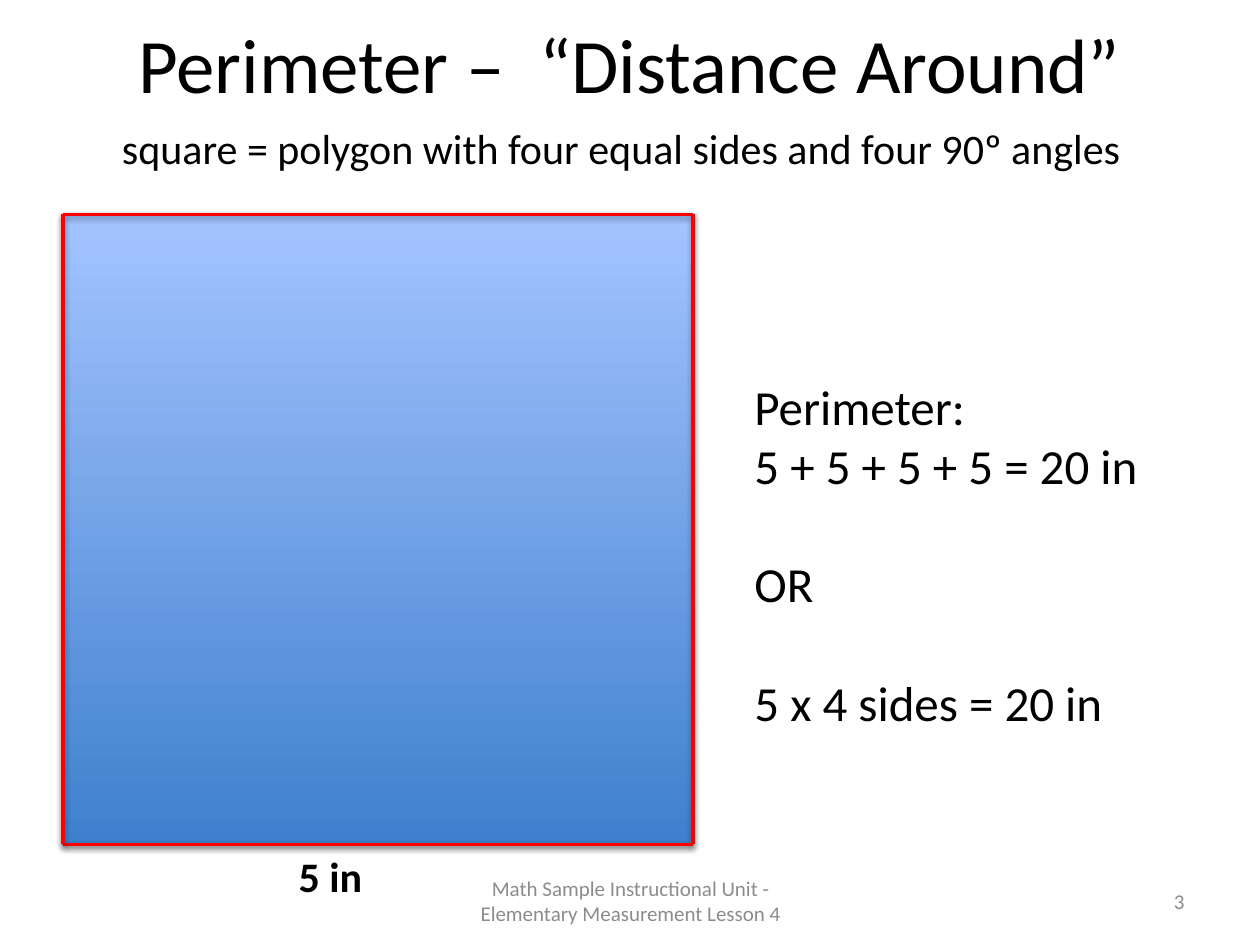
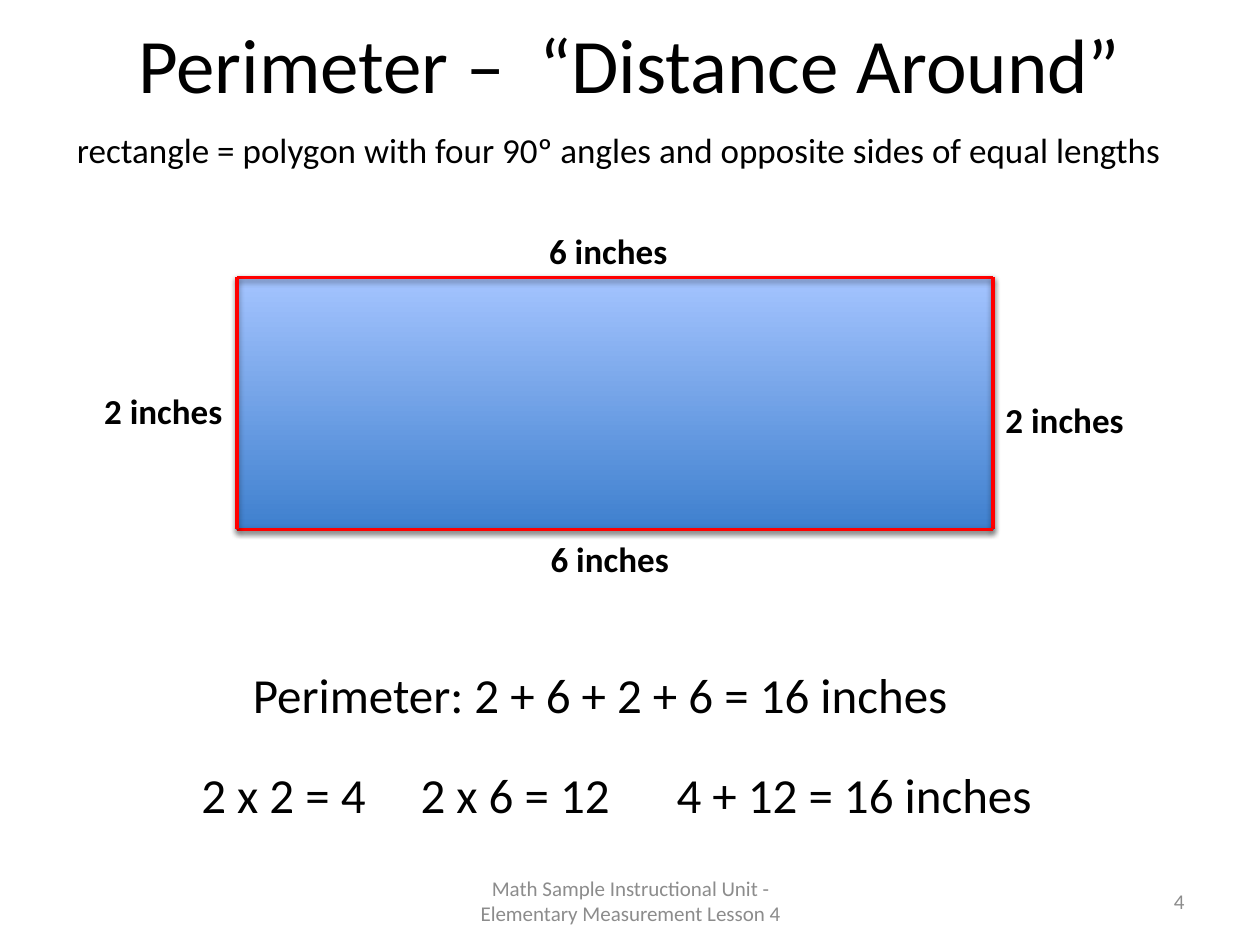
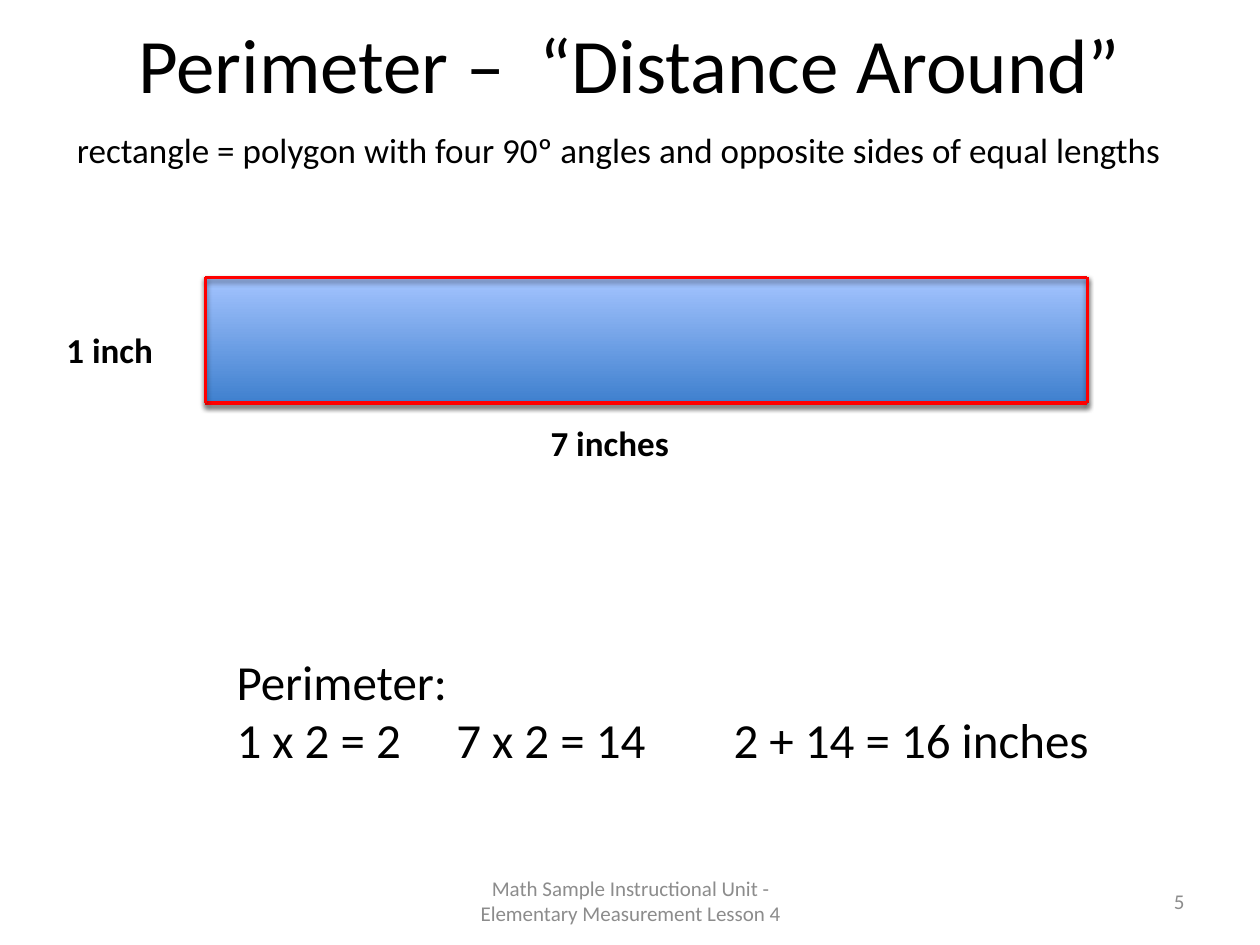
"""Build three slides on the perimeter of a square and of two rectangles."""
import lxml.etree
import pptx
import pptx.dml.color
import pptx.enum.shapes
import pptx.enum.text
import pptx.oxml.ns
import pptx.util

Cm = pptx.util.Cm
Pt = pptx.util.Pt
Align = pptx.enum.text.PP_ALIGN
Anchor = pptx.enum.text.MSO_ANCHOR
AutoSize = pptx.enum.text.MSO_AUTO_SIZE

COLORS = {
    "text": "000000",
    "footer": "8C8C8C",
    "gradient_bottom": "3F80CE",
    "gradient_top": "A4C4FF",
    "outline": "4B7EBC",
    "side": "FF0000",
    "shadow": "000000",
}
RGB = {name: pptx.dml.color.RGBColor.from_string(value) for name, value in COLORS.items()}

TITLE = "Perimeter –  “Distance Around”"
FOOTER = "Math Sample Instructional Unit - Elementary Measurement Lesson 4"
RECTANGLE_RULE = "rectangle = polygon with four 90º angles and opposite sides of equal lengths"

FRAME_FIXED = {"word_wrap": True, "vertical_anchor": Anchor.MIDDLE}
FRAME_LABEL = {"word_wrap": False, "auto_size": AutoSize.SHAPE_TO_FIT_TEXT}
FRAME_WORK = {"word_wrap": True, "auto_size": AutoSize.SHAPE_TO_FIT_TEXT}

STYLES = {
    "title": (FRAME_FIXED, {"alignment": Align.CENTER}, {"size": Pt(44)}, "text"),
    "footer": (FRAME_FIXED, {"alignment": Align.CENTER}, {"size": Pt(12)}, "footer"),
    "number": (FRAME_FIXED, {"alignment": Align.RIGHT}, {"size": Pt(12)}, "footer"),
    "rule": (FRAME_LABEL, {}, {"size": Pt(20)}, "text"),
    "large_rule": (FRAME_LABEL, {}, {"size": Pt(24)}, "text"),
    "label": (FRAME_LABEL, {}, {"size": Pt(20), "bold": True}, "text"),
    "large_label": (FRAME_LABEL, {}, {"size": Pt(24), "bold": True}, "text"),
    "work": (FRAME_WORK, {}, {"size": Pt(28)}, "text"),
}

SLIDES = [
    {
        "number": 3,
        "figure": (1.27, 4.32, 12.7, 12.7),
        "texts": [
            ("large_rule", "square = polygon with four equal sides and four 90º angles",
             (2.21, 2.34, 21.31, 1.27)),
            ("large_label", "5 in", (5.77, 17.02, 1.8, 1.27)),
            ("work", "Perimeter:\n5 + 5 + 5 + 5 = 20 in\nOR\n5 x 4 sides = 20 in",
             (14.96, 7.47, 9.73, 7.44)),
        ],
        "spaced_lines": ("OR", "5 x 4 sides = 20 in"),
        "tabs": (),
    },
    {
        "number": 4,
        "figure": (4.78, 5.59, 15.24, 5.08),
        "texts": [
            ("rule", RECTANGLE_RULE, (1.3, 2.46, 22.53, 1.12)),
            ("label", "6 inches", (10.82, 4.5, 2.92, 1.12)),
            ("label", "6 inches", (10.85, 10.72, 2.92, 1.12)),
            ("label", "2 inches", (1.85, 7.72, 2.92, 1.12)),
            ("label", "2 inches", (20.02, 7.9, 2.92, 1.12)),
            ("work", "Perimeter: 2 + 6 + 2 + 6 = 16 inches", (4.85, 13.28, 14.71, 1.45)),
            ("work", "2 x 2 = 4\t2 x 6 = 12\t4 + 12 = 16 inches", (3.81, 15.29, 17.42, 1.45)),
        ],
        "spaced_lines": (),
        "tabs": (4.42, 9.58),
    },
    {
        "number": 5,
        "figure": (4.14, 5.59, 17.78, 2.54),
        "texts": [
            ("rule", RECTANGLE_RULE, (1.3, 2.46, 22.53, 1.12)),
            ("label", "7 inches", (10.85, 8.38, 2.92, 1.12)),
            ("label", "1 inch", (1.09, 6.5, 2.26, 1.12)),
            ("work", "Perimeter:\n1 x 2 = 2\t7 x 2 = 14\t2 + 14 = 16 inches",
             (4.52, 13, 17.88, 2.64)),
        ],
        "spaced_lines": (),
        "tabs": (4.43, 10.02),
    },
]


def add_text(slide, style, text, box, spaced_lines=(), tabs=()):
    frame_format, paragraph_format, font_format, color = STYLES[style]
    frame = slide.shapes.add_textbox(*map(Cm, box)).text_frame
    frame.text = text
    for name, value in frame_format.items():
        setattr(frame, name, value)
    for paragraph in frame.paragraphs:
        for name, value in paragraph_format.items():
            setattr(paragraph, name, value)
        if paragraph.text in spaced_lines:
            paragraph.space_before = Pt(34)
        if "\t" in paragraph.text:
            properties = paragraph._p.get_or_add_pPr()
            tab_list = lxml.etree.SubElement(properties, pptx.oxml.ns.qn("a:tabLst"))
            for position in tabs:
                lxml.etree.SubElement(tab_list, pptx.oxml.ns.qn("a:tab"),
                                      pos=str(Cm(position)), algn="l")
        for run in paragraph.runs:
            for name, value in {"name": "Calibri", **font_format}.items():
                setattr(run.font, name, value)
            run.font.color.rgb = RGB[color]


def add_shadow(shape, distance, opacity):
    effects = lxml.etree.SubElement(shape._element.spPr, pptx.oxml.ns.qn("a:effectLst"))
    shadow = lxml.etree.SubElement(
        effects, pptx.oxml.ns.qn("a:outerShdw"), blurRad=str(Pt(3.1)),
        dist=str(Pt(distance)), dir="5400000", rotWithShape="0")
    color = lxml.etree.SubElement(shadow, pptx.oxml.ns.qn("a:srgbClr"), val=COLORS["shadow"])
    lxml.etree.SubElement(color, pptx.oxml.ns.qn("a:alpha"), val=str(opacity * 1000))


presentation = pptx.Presentation()
presentation.slide_width = Cm(25.4)
presentation.slide_height = Cm(19.05)

for content in SLIDES:
    slide = presentation.slides.add_slide(presentation.slide_layouts[6])
    add_text(slide, "title", TITLE, (1.27, -0.33, 22.86, 3.18))

    left, top, width, height = content["figure"]
    figure = slide.shapes.add_shape(
        pptx.enum.shapes.MSO_SHAPE.RECTANGLE, *map(Cm, content["figure"]))
    figure.fill.gradient()
    figure.fill.gradient_angle = 90
    for stop, position, name in zip(
            figure.fill.gradient_stops, (0, 1), ("gradient_bottom", "gradient_top")):
        stop.position = position
        stop.color.rgb = RGB[name]
    figure.line.color.rgb = RGB["outline"]
    figure.line.width = Pt(0.75)
    add_shadow(figure, 1.8, 35)

    for style, text, box in content["texts"]:
        add_text(slide, style, text, box, content["spaced_lines"], content["tabs"])

    right, bottom = left + width, top + height
    corners = [(left, top), (right, top), (right, bottom), (left, bottom)]
    for start, end in zip(corners, corners[1:] + corners[:1]):
        side = slide.shapes.add_connector(
            pptx.enum.shapes.MSO_CONNECTOR.STRAIGHT, *map(Cm, start + end))
        side.line.color.rgb = RGB["side"]
        side.line.width = Pt(2)
        add_shadow(side, 1.6, 38)

    add_text(slide, "footer", FOOTER, (8.69, 17.65, 8.05, 1.02))
    add_text(slide, "number", str(content["number"]), (18.21, 17.65, 5.92, 1.02))

presentation.save("out.pptx")
